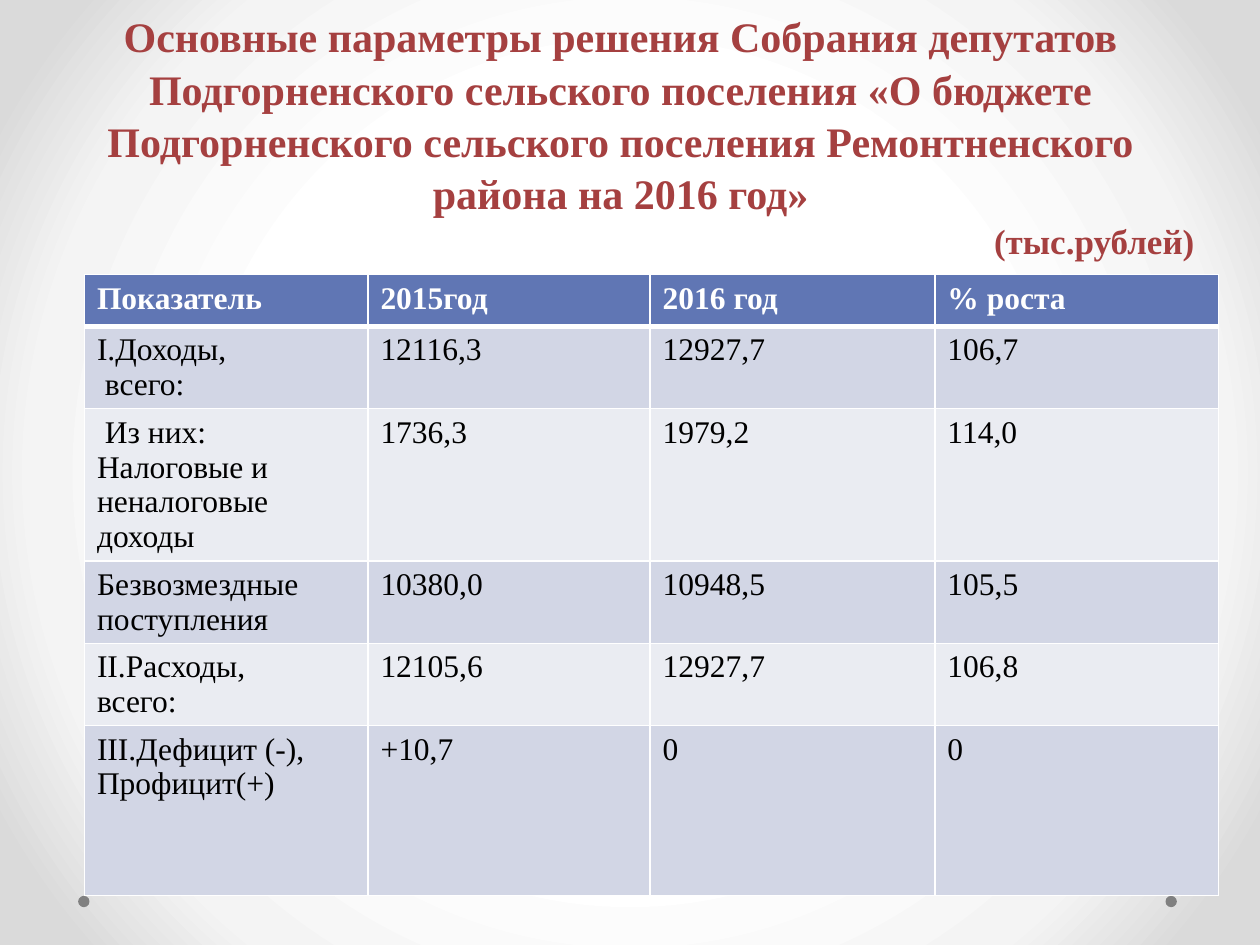
from typing import NamedTuple

from lxml import etree
from pptx import Presentation
from pptx import util as u
from pptx.dml.color import RGBColor
from pptx.enum import shapes, text
from pptx.oxml import ns

FONT = "Times New Roman"
WHITE, BLACK, RED, GREY = "FFFFFF", "000000", "A54040", "808080"
HEADER_FILL, BAND_FILLS = "6076B4", ("D2D6E5", "EAECF2")
BACKGROUND_STOPS = ((50, "FFFFFF"), (76, "F4F4F4"), (92, "DADADA"))
COLUMN_WIDTHS = (2.25, 2.24, 2.26, 2.25)
ROW_HEIGHT, LAST_ROW_HEIGHT = 0.41, 1.35
TITLE = (
    "Основные параметры решения Собрания депутатов "
    "Подгорненского сельского поселения «О бюджете "
    "Подгорненского сельского поселения Ремонтненского\vрайона на 2016 год»"
)


class BudgetRow(NamedTuple):
    indicator: str
    year_2015: str
    year_2016: str
    growth: str


class Dot(NamedTuple):
    left: float
    top: float
    size: float


ROWS = (
    BudgetRow("Показатель", "2015год", "2016 год", "% роста"),
    BudgetRow("I.Доходы,\n всего:", "12116,3", "12927,7", "106,7"),
    BudgetRow(" Из них:\nНалоговые и неналоговые доходы", "1736,3", "1979,2", "114,0"),
    BudgetRow("Безвозмездные поступления", "10380,0", "10948,5", "105,5"),
    BudgetRow("II.Расходы,\nвсего:", "12105,6", "12927,7", "106,8"),
    BudgetRow("III.Дефицит (-),\nПрофицит(+)", "+10,7", "0", "0"),
)
DOTS = (Dot(9.25, 7.11, 0.09), Dot(0.62, 7.11, 0.09))


def rgb(value: str) -> RGBColor:
    return RGBColor.from_string(value)


def add_element(parent, tag: str, **attributes: str):
    return etree.SubElement(parent, ns.qn(tag), attributes)


def add_solid_fill(parent, color: str) -> None:
    add_element(add_element(parent, "a:solidFill"), "a:srgbClr", val=color)


def write_paragraph(paragraph, content: str, *, size: float, color: str,
                    bold: bool = False, align=text.PP_ALIGN.LEFT,
                    line_spacing: float = 1.0) -> None:
    paragraph.text = content
    paragraph.alignment = align
    paragraph.line_spacing = line_spacing
    for run in paragraph.runs:
        run.font.name = FONT
        run.font.size = u.Pt(size)
        run.font.bold = bold
        run.font.color.rgb = rgb(color)


def set_background(slide) -> None:
    background = etree.Element(ns.qn("p:bg"))
    properties = add_element(background, "p:bgPr")
    gradient = add_element(properties, "a:gradFill", rotWithShape="1")
    stops = add_element(gradient, "a:gsLst")
    for position, color in BACKGROUND_STOPS:
        stop = add_element(stops, "a:gs", pos=str(position * 1000))
        add_element(stop, "a:srgbClr", val=color)
    circle = add_element(gradient, "a:path", path="circle")
    add_element(circle, "a:fillToRect", l="50000", t="50000", r="50000", b="50000")
    add_element(properties, "a:effectLst")
    slide.element.cSld.insert(0, background)


def add_dot(slide, dot: Dot) -> None:
    shape = slide.shapes.add_shape(
        shapes.MSO_SHAPE.OVAL, u.Inches(dot.left), u.Inches(dot.top),
        u.Inches(dot.size), u.Inches(dot.size))
    shape.shadow.inherit = False
    shape.fill.solid()
    shape.fill.fore_color.rgb = rgb(GREY)
    shape.line.fill.background()


def set_borders(cell, top: float, bottom: float) -> None:
    properties = cell._tc.get_or_add_tcPr()
    for side, width in (("L", 1), ("R", 1), ("T", top), ("B", bottom)):
        line = add_element(properties, f"a:ln{side}", w=str(u.Pt(width)))
        add_solid_fill(line, WHITE)


def add_budget_table(slide) -> None:
    heights = [ROW_HEIGHT] * (len(ROWS) - 1) + [LAST_ROW_HEIGHT]
    table = slide.shapes.add_table(
        len(ROWS), len(COLUMN_WIDTHS), u.Inches(0.67), u.Inches(2.18),
        u.Inches(sum(COLUMN_WIDTHS)), u.Inches(sum(heights))).table
    for column, width in zip(table.columns, COLUMN_WIDTHS):
        column.width = u.Inches(width)
    for index, (row, height, values) in enumerate(zip(table.rows, heights, ROWS)):
        row.height = u.Inches(height)
        header = index == 0
        for cell, value in zip(row.cells, values):
            set_borders(cell, top=3 if index == 1 else 1, bottom=3 if header else 1)
            cell.fill.solid()
            cell.fill.fore_color.rgb = rgb(
                HEADER_FILL if header else BAND_FILLS[(index - 1) % 2])
            cell.text = value
            for paragraph in cell.text_frame.paragraphs:
                write_paragraph(paragraph, paragraph.text, size=18, bold=header,
                                color=WHITE if header else BLACK)


def add_title(slide) -> None:
    frame = slide.shapes.add_textbox(
        u.Inches(0.12), u.Inches(0.02), u.Inches(9.61), u.Inches(2.05)).text_frame
    frame.word_wrap = True
    frame.margin_left = frame.margin_right = u.Inches(0.25)
    write_paragraph(frame.paragraphs[0], TITLE, size=24, color=RED, bold=True,
                    align=text.PP_ALIGN.CENTER, line_spacing=1.04)
    write_paragraph(frame.add_paragraph(), "(тыс.рублей)", size=20, color=RED,
                    bold=True, align=text.PP_ALIGN.RIGHT, line_spacing=1.04)


def main() -> None:
    """Build the budget parameters slide and save it."""
    presentation = Presentation()
    presentation.slide_width = u.Inches(10)
    presentation.slide_height = u.Inches(7.5)
    slide = presentation.slides.add_slide(presentation.slide_layouts[6])
    set_background(slide)
    for dot in DOTS:
        add_dot(slide, dot)
    add_budget_table(slide)
    add_title(slide)
    presentation.save("out.pptx")


if __name__ == "__main__":
    main()
